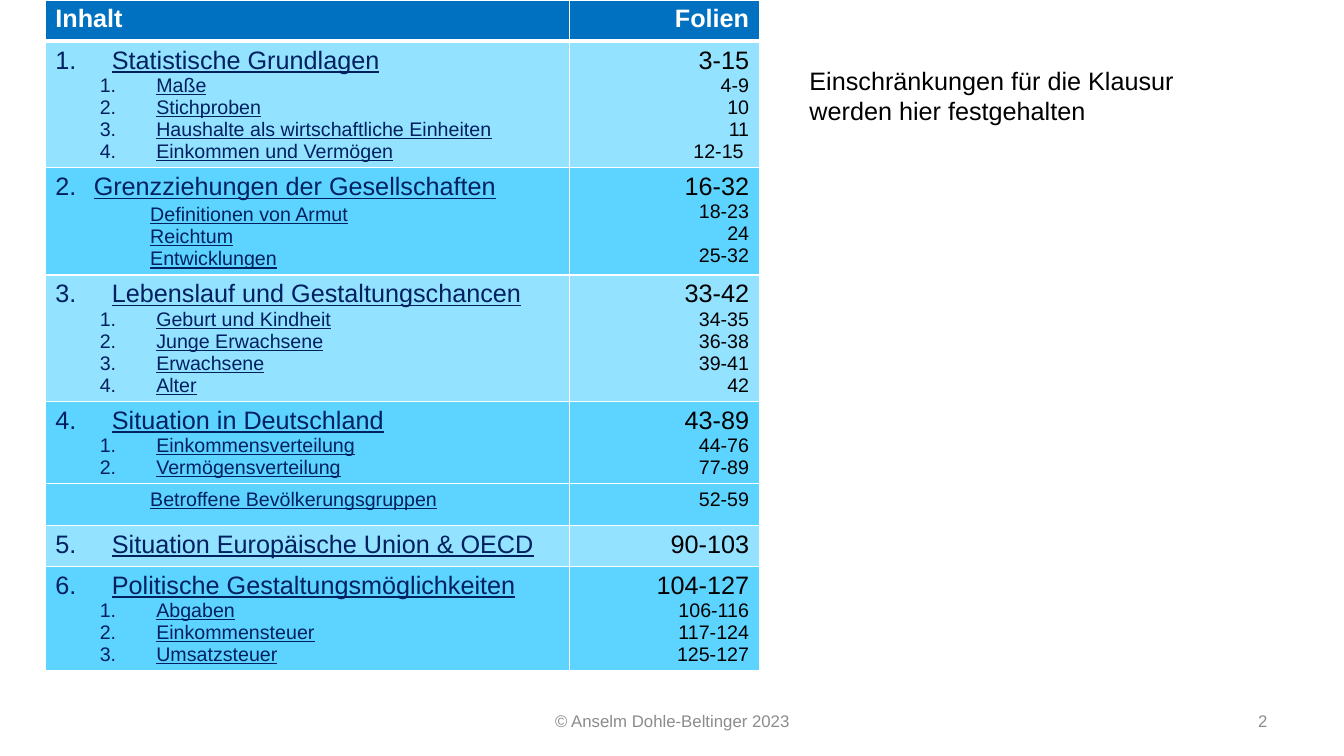
import copy
import dataclasses
from typing import Any, Optional

import pptx
import pptx.dml.color
import pptx.enum.text
import pptx.oxml.ns
import pptx.util
from lxml import etree

Inches = pptx.util.Inches
Align = pptx.enum.text.PP_ALIGN
Anchor = pptx.enum.text.MSO_ANCHOR
AutoSize = pptx.enum.text.MSO_AUTO_SIZE
qn = pptx.oxml.ns.qn

NAVY, BLACK, WHITE, GREY = "002060", "000000", "FFFFFF", "8C8C8C"
HEADER, LIGHT, STRONG = "0070C0", "93E2FF", "5DD4FF"
LEAD, SUB = 18, 14
ROW_HEIGHT = 0.41


@dataclasses.dataclass
class Section:
    fill: str
    pages: tuple[str, ...]
    topics: tuple[str, ...] = ()
    number: Optional[int] = None
    title: str = ""
    indent: float = 0.56
    tabbed: bool = False
    tab_size: int = SUB


@dataclasses.dataclass
class Note:
    left: float
    top: float
    width: float
    height: float
    text: str
    size: int
    color: str
    align: Any
    anchor: Any
    auto_size: Any


SECTIONS = [
    Section(LIGHT, ("3-15", "4-9", "10", "11", "12-15 "),
            ("Maße", "Stichproben", "Haushalte als wirtschaftliche Einheiten",
             "Einkommen und Vermögen"), 1, "Statistische Grundlagen"),
    Section(STRONG, ("16-32", "18-23\n24\n25-32"),
            ("Definitionen von Armut", "Reichtum", "Entwicklungen"),
            2, "Grenzziehungen der Gesellschaften", 0.38, True, 16),
    Section(LIGHT, ("33-42\n34-35\n36-38\n39-41\n42",),
            ("Geburt und Kindheit", "Junge Erwachsene", "Erwachsene", "Alter"),
            3, "Lebenslauf und Gestaltungschancen"),
    Section(STRONG, ("43-89\n44-76\n77-89",),
            ("Einkommensverteilung", "Vermögensverteilung"),
            4, "Situation in Deutschland"),
    Section(STRONG, ("52-59",), ("Betroffene Bevölkerungsgruppen",), tabbed=True),
    Section(LIGHT, ("90-103",), (), 5, "Situation Europäische Union & OECD"),
    Section(STRONG, ("104-127\n106-116\n117-124", "125-127"),
            ("Abgaben", "Einkommensteuer", "Umsatzsteuer"),
            6, "Politische Gestaltungsmöglichkeiten"),
]

NOTES = [
    Note(4.56, 6.95, 4.22, 0.4, "© Anselm Dohle-Beltinger 2023", 12, GREY,
         Align.CENTER, Anchor.MIDDLE, AutoSize.NONE),
    Note(9.56, 6.95, 3.11, 0.4, "2", 12, GREY,
         Align.RIGHT, Anchor.MIDDLE, AutoSize.NONE),
    Note(7.93, 0.6, 3.86, 0.71,
         "Einschränkungen für die Klausur werden hier festgehalten", 18, BLACK,
         Align.LEFT, Anchor.TOP, AutoSize.SHAPE_TO_FIT_TEXT),
]


def rgb(color: str) -> Any:
    return pptx.dml.color.RGBColor.from_string(color)


def add_span(para: Any, text: str, size: int, color: str,
             bold: bool = False, underline: bool = False) -> Any:
    span = para.add_run()
    span.text = text
    formats = {"name": "Arial", "size": pptx.util.Pt(size),
               "bold": bold, "underline": underline}
    for name, value in formats.items():
        setattr(span.font, name, value)
    span.font.color.rgb = rgb(color)
    return span


def add_break(para: Any, span: Any) -> None:
    para.add_line_break()
    para._p.findall(qn("a:br"))[-1].append(copy.deepcopy(span.font._rPr))


def next_para(frame: Any) -> Any:
    first = frame.paragraphs[0]
    return frame.add_paragraph() if first.runs else first


def set_indent(para: Any, margin: float, indent: float,
               start: Optional[int] = None) -> None:
    properties = para._p.get_or_add_pPr()
    properties.set("marL", str(Inches(margin)))
    properties.set("indent", str(Inches(indent)))
    if start is not None:
        etree.SubElement(properties, qn("a:buFont"), typeface="+mj-lt")
        numbering = etree.SubElement(properties, qn("a:buAutoNum"), type="arabicPeriod")
        if start > 1:
            numbering.set("startAt", str(start))


def write_topics(frame: Any, section: Section) -> None:
    if section.title:
        para = next_para(frame)
        set_indent(para, section.indent, -section.indent, section.number)
        add_span(para, section.title, LEAD, NAVY, underline=True)
    if section.tabbed:
        para = next_para(frame)
        para.level = 1
        set_indent(para, 0.44, 0)
        for index, topic in enumerate(section.topics):
            if index:
                add_break(para, span)
            add_span(para, "\t", SUB if index else section.tab_size, BLACK)
            span = add_span(para, topic, SUB, NAVY, underline=True)
        return
    for topic in section.topics:
        para = next_para(frame)
        para.level = 1
        set_indent(para, 1, -0.56, 1)
        add_span(para, topic, SUB, NAVY, underline=True)


def write_pages(frame: Any, section: Section) -> None:
    size = LEAD if section.title else SUB
    for block in section.pages:
        para = next_para(frame)
        para.alignment = Align.RIGHT
        for index, pages in enumerate(block.split("\n")):
            if index:
                add_break(para, span)
            span = add_span(para, pages, size, BLACK)
            size = SUB


def style_cell(cell: Any, fill: str, top: int = 1, bottom: int = 1) -> None:
    properties = cell._tc.get_or_add_tcPr()
    for side, width in {"L": 1, "R": 1, "T": top, "B": bottom}.items():
        line = etree.SubElement(properties, qn(f"a:ln{side}"),
                                w=str(pptx.util.Pt(width)))
        solid = etree.SubElement(line, qn("a:solidFill"))
        etree.SubElement(solid, qn("a:srgbClr"), val=WHITE)
    cell.fill.solid()
    cell.fill.fore_color.rgb = rgb(fill)


def add_contents(page: Any) -> None:
    shape = page.shapes.add_table(len(SECTIONS) + 1, 2, Inches(0.45), 0,
                                  Inches(7.08), Inches(6.98))
    table = shape.table
    for column, width in zip(table.columns, (5.2, 1.88)):
        column.width = Inches(width)
    for row in table.rows:
        row.height = Inches(ROW_HEIGHT)
    shape.height = Inches(6.98)
    for index, (label, align) in enumerate((("Inhalt", Align.LEFT),
                                            ("Folien", Align.RIGHT))):
        cell = table.cell(0, index)
        style_cell(cell, HEADER, bottom=3)
        para = cell.text_frame.paragraphs[0]
        para.alignment = align
        add_span(para, label, LEAD, WHITE, bold=True)
    for index, section in enumerate(SECTIONS, 1):
        for column, write in enumerate((write_topics, write_pages)):
            cell = table.cell(index, column)
            style_cell(cell, section.fill, top=3 if index == 1 else 1)
            write(cell.text_frame, section)


def add_note(page: Any, note: Note) -> None:
    box = page.shapes.add_textbox(*map(Inches, (note.left, note.top,
                                                note.width, note.height)))
    formats = {"word_wrap": True, "auto_size": note.auto_size,
               "vertical_anchor": note.anchor}
    for name, value in formats.items():
        setattr(box.text_frame, name, value)
    para = box.text_frame.paragraphs[0]
    para.alignment = note.align
    add_span(para, note.text, note.size, note.color)


def main() -> None:
    deck = pptx.Presentation()
    deck.slide_width, deck.slide_height = Inches(13.33), Inches(7.5)
    page = deck.slides.add_slide(deck.slide_layouts[6])
    add_contents(page)
    for note in NOTES:
        add_note(page, note)
    deck.save("out.pptx")


if __name__ == "__main__":
    main()
